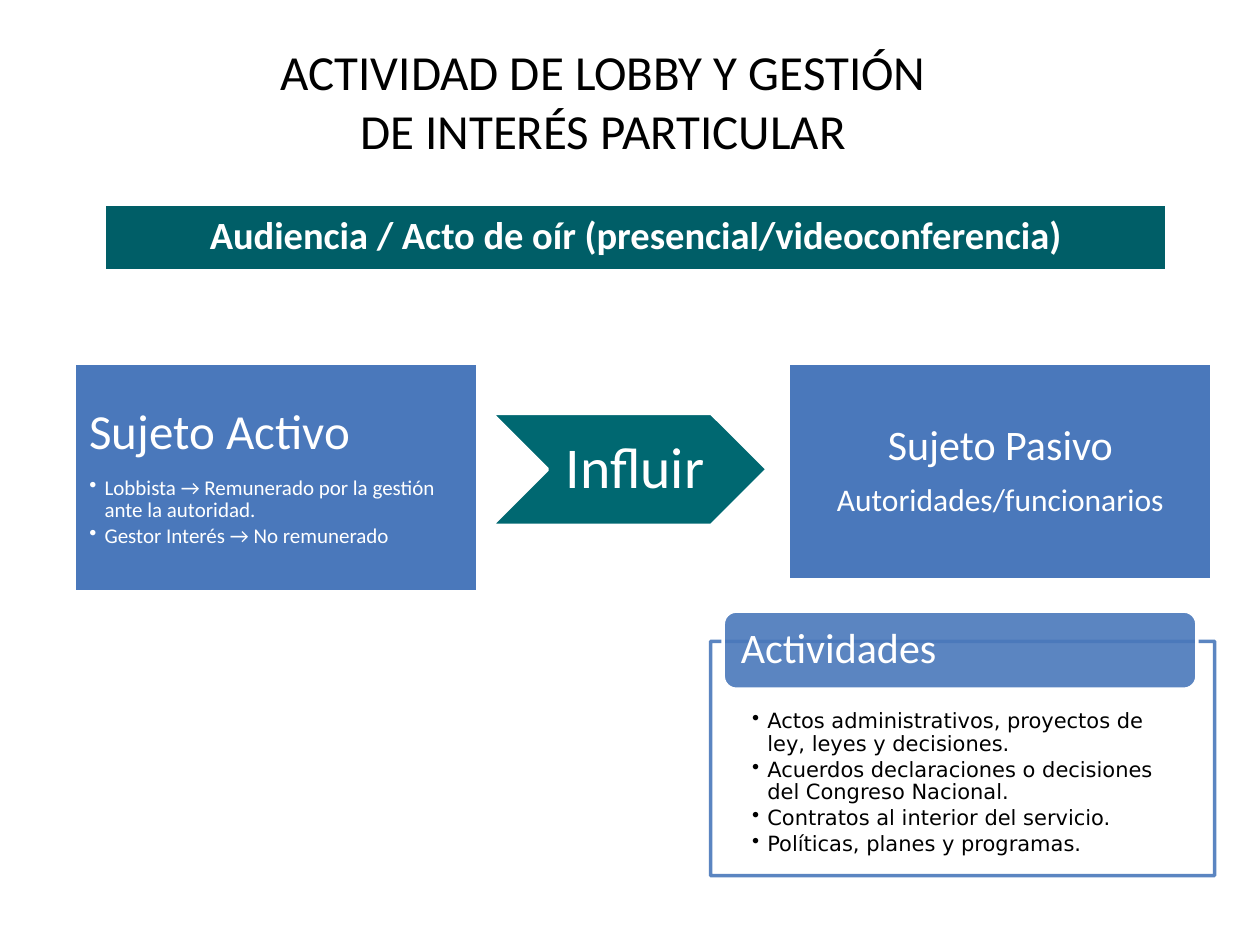
from copy import deepcopy

from lxml import etree
from pptx import Presentation
from pptx.dml.color import RGBColor
from pptx.enum.shapes import MSO_SHAPE as Shape
from pptx.enum.text import MSO_ANCHOR as Anchor, MSO_AUTO_SIZE as AutoSize, PP_ALIGN as Align
from pptx.oxml.ns import qn
from pptx.util import Inches, Pt

COLORS = {
    "white": "FFFFFF",
    "black": "000000",
    "banner": "005E67",
    "arrow": "006871",
    "blue": "4A78BB",
}


def rgb(name):
    return RGBColor.from_string(COLORS[name])


def heading(text, size, **style):
    """Describe a paragraph followed by a gap of 35 % of its size."""
    return {"text": text, "size": size, "after": 0.35, "spacing": 0.9, **style}


def bullet(text, **style):
    """Describe a list item followed by a gap of 15 % of its size."""
    return {"text": text, "size": 12, "after": 0.15, "spacing": 0.9, "bullet": True, **style}


class SlideBuilder:
    font = "Calibri"
    line_width = Pt(2)

    def __init__(self, page):
        self.page = page

    def title(self, place, text):
        box = self.page.shapes.title
        box.left, box.top, box.width, box.height = map(Inches, place)
        self.fill_text(box.text_frame, [{"text": text, "size": 28, "color": "black",
                                         "align": Align.CENTER}])

    def panel(self, kind, place, fill, paras, insets, line="white",
              fill_alpha=100, line_alpha=100, **frame_format):
        box = self.page.shapes.add_shape(kind, *map(Inches, place))
        box.shadow.inherit = False
        box.line.width = self.line_width
        for paint, color in ((box.fill, fill), (box.line.fill, line)):
            paint.solid()
            paint.fore_color.rgb = rgb(color)
        props = box._element.spPr
        self.set_alpha(props.find(qn("a:solidFill")), fill_alpha)
        self.set_alpha(props.find(qn("a:ln")), line_alpha)
        self.fill_text(box.text_frame, paras, insets, **frame_format)

    @staticmethod
    def set_alpha(element, percent):
        if percent < 100:
            color = next(element.iter(qn("a:srgbClr")))
            etree.SubElement(color, qn("a:alpha")).set("val", str(percent * 1000))

    def fill_text(self, frame, paras, insets=(0.1, 0.05, 0.1, 0.05),
                  anchor=Anchor.MIDDLE, wrap=True):
        sides = ("margin_left", "margin_top", "margin_right", "margin_bottom")
        values = {"auto_size": AutoSize.NONE, "word_wrap": wrap, "vertical_anchor": anchor,
                  **dict(zip(sides, map(Inches, insets)))}
        for name, value in values.items():
            setattr(frame, name, value)
        for index, style in enumerate(paras):
            para = frame.add_paragraph() if index else frame.paragraphs[0]
            self.paragraph(para, **style)

    def paragraph(self, para, text, size, color="white", font=None, bold=False,
                  align=Align.LEFT, spacing=1.0, after=0, bullet=False):
        para.text = text
        if bullet:
            para.level = 1
            props = para._p.get_or_add_pPr()
            props.set("marL", str(Inches(0.12)))
            props.set("indent", str(-Inches(0.12)))
            etree.SubElement(props, qn("a:buChar")).set("char", "•")
        layout = {"alignment": align, "line_spacing": spacing,
                  "space_before": Pt(0), "space_after": Pt(size * after)}
        for name, value in layout.items():
            setattr(para, name, value)
        letters = {"name": font or self.font, "size": Pt(size), "bold": bold}
        for span in para.runs:
            for name, value in letters.items():
                setattr(span.font, name, value)
            span.font.color.rgb = rgb(color)
        for line_break in para._p.findall(qn("a:br")):
            line_break.append(deepcopy(para.runs[0]._r.rPr))


def main():
    deck = Presentation()
    deck.slide_width, deck.slide_height = Inches(10), Inches(7.5)
    builder = SlideBuilder(deck.slides.add_slide(deck.slide_layouts[5]))
    centered = {"align": Align.CENTER}

    builder.title((0.32, 0.17, 8.93, 1.25),
                  "ACTIVIDAD DE LOBBY Y GESTIÓN\nDE INTERÉS PARTICULAR")
    builder.panel(Shape.RECTANGLE, (0.83, 1.62, 8.43, 0.53), "banner",
                  [heading("Audiencia / Acto de oír (presencial/videoconferencia)", 22,
                           bold=True, **centered)],
                  (0.09,) * 4)
    builder.panel(Shape.RECTANGLE, (0.59, 2.88, 3.2, 1.82), "blue",
                  [heading("Sujeto Activo", 28),
                   bullet("Lobbista → Remunerado por la gestión ante la autoridad."),
                   bullet("Gestor Interés → No remunerado")],
                  (0.12,) * 4)
    builder.panel(Shape.CHEVRON, (3.9, 3.28, 2.19, 0.89), "arrow",
                  [heading("Influir", 33, **centered)],
                  (0.14, 0.05, 0.05, 0.05), wrap=False)
    builder.panel(Shape.RECTANGLE, (6.26, 2.88, 3.36, 1.72), "blue",
                  [heading("Sujeto Pasivo", 24, **centered),
                   heading("Autoridades/funcionarios", 18, **centered)],
                  (0.1,) * 4)

    activities = (
        "Actos administrativos, proyectos de ley, leyes y decisiones.",
        "Acuerdos declaraciones o decisiones del Congreso Nacional.",
        "Contratos al interior del servicio.",
        "Políticas, planes y programas.",
    )
    builder.panel(Shape.RECTANGLE, (5.64, 5.09, 4, 1.86), "white",
                  [bullet(text, color="black", font="DejaVu Sans") for text in activities],
                  (0.33, 0.55, 0.33, 0.09), line="blue",
                  fill_alpha=90, line_alpha=90, anchor=Anchor.TOP)
    builder.panel(Shape.ROUNDED_RECTANGLE, (5.74, 4.85, 3.76, 0.62), "blue",
                  [heading("Actividades", 24)],
                  (0.11, 0, 0.11, 0), fill_alpha=90)
    deck.save("out.pptx")


if __name__ == "__main__":
    main()
